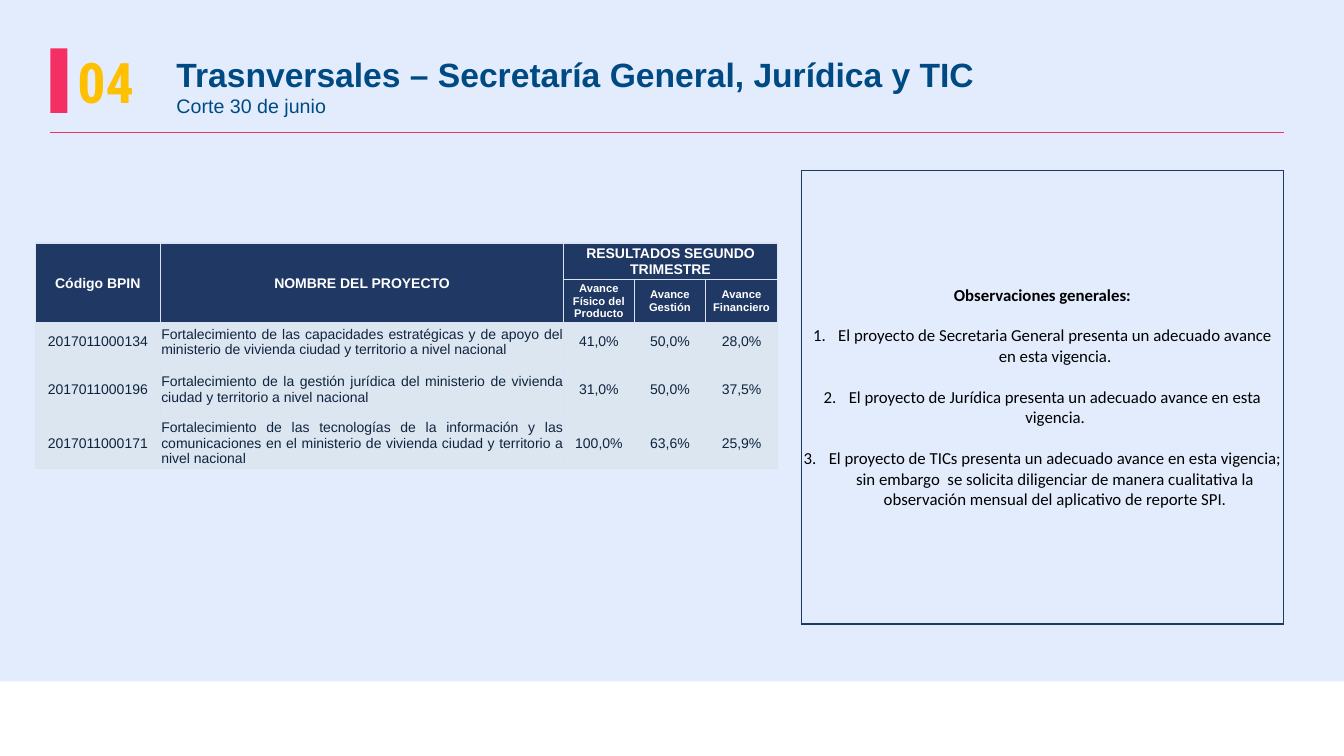
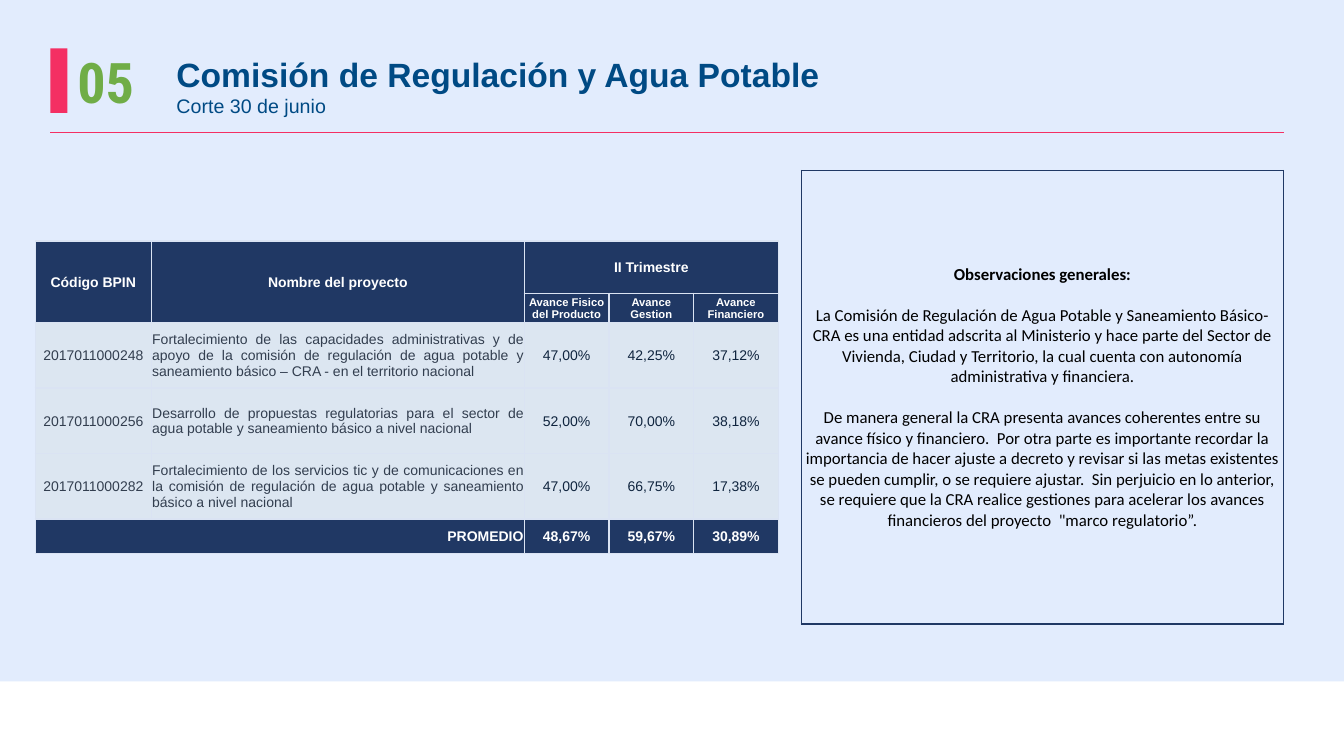
from dataclasses import dataclass

from lxml import etree
from pptx import Presentation
from pptx import util as u
from pptx.dml.color import RGBColor
from pptx.enum import shapes, text
from pptx.oxml import ns

EMU_PER_PX = 9144  # 100 px to the inch
ALIGN = text.PP_ALIGN


# Theme and content types
@dataclass(frozen=True)
class Theme:
    background: str = "E2ECFD"
    white: str = "FFFFFF"
    black: str = "000000"
    title: str = "004A84"
    accent: str = "F42F63"
    navy: str = "203864"
    body_fill: str = "DCE6F1"
    grid: str = "DAE3F3"
    ink: str = "0F243E"
    slate: str = "323E4F"
    amber: str = "FFC000"
    green: str = "70AD47"
    font: str = "Arial"
    remark_font: str = "Calibri"
    number_font: str = "Roboto Condensed"
    number_size: int = 40
    title_size: int = 24
    subtitle_size: int = 14
    remark_size: int = 12
    remark_gap: float = 14.6
    table_size: int = 10
    subhead_size: int = 8


THEME = Theme()


@dataclass(frozen=True)
class Box:
    left: int
    top: int
    width: int
    height: int

    def emu(self) -> tuple[u.Emu, ...]:
        return tuple(px(side) for side in (self.left, self.top, self.width, self.height))


@dataclass(frozen=True)
class Style:
    size: int
    color: str
    bold: bool = False
    font: str = THEME.font


@dataclass(frozen=True)
class Project:
    code: str
    name: str
    values: tuple[str, str, str]


@dataclass(frozen=True)
class Results:
    top: int
    columns: tuple[int, ...]
    rows: tuple[int, ...]
    name_head: str
    period_head: str
    value_heads: tuple[str, str, str]
    label_color: str
    projects: tuple[Project, ...]
    averages: tuple[str, ...] = ()


@dataclass(frozen=True)
class Section:
    number: str
    number_color: str
    title: str
    results: Results
    remarks: tuple[str, ...]
    numbered: bool


SECTIONS = (
    Section(
        "04", THEME.amber, "Trasnversales – Secretaría General, Jurídica y TIC",
        Results(
            241, (124, 400, 70, 71, 71), (36, 43, 38, 56, 51),
            "NOMBRE DEL PROYECTO", "RESULTADOS SEGUNDO TRIMESTRE",
            ("Avance Físico del Producto", "Avance Gestión", "Avance Financiero"),
            THEME.ink,
            (
                Project("2017011000134",
                        "Fortalecimiento de las capacidades estratégicas y de apoyo del "
                        "ministerio de vivienda ciudad y territorio a nivel nacional",
                        ("41,0%", "50,0%", "28,0%")),
                Project("2017011000196",
                        "Fortalecimiento de la gestión jurídica del ministerio de vivienda "
                        "ciudad y territorio a nivel nacional",
                        ("31,0%", "50,0%", "37,5%")),
                Project("2017011000171",
                        "Fortalecimiento de las tecnologías de la información y las "
                        "comunicaciones en el ministerio de vivienda ciudad y territorio "
                        "a nivel nacional",
                        ("100,0%", "63,6%", "25,9%")),
            ),
        ),
        (
            "El proyecto de Secretaria General presenta un adecuado avance en esta vigencia.",
            "El proyecto de Jurídica presenta un adecuado avance en esta vigencia.",
            "El proyecto de TICs presenta un adecuado avance en esta vigencia; sin embargo  "
            "se solicita diligenciar de manera cualitativa la observación mensual del "
            "aplicativo de reporte SPI.",
        ),
        True,
    ),
    Section(
        "05", THEME.green, "Comisión de Regulación y Agua Potable",
        Results(
            239, (115, 370, 84, 84, 84), (52, 29, 65, 65, 65, 34),
            "Nombre del proyecto", "II Trimestre",
            ("Avance Fisico del Producto", "Avance Gestion", "Avance Financiero"),
            THEME.slate,
            (
                Project("2017011000248",
                        "Fortalecimiento de las capacidades administrativas y de apoyo de la "
                        "comisión de regulación de agua potable y saneamiento básico – CRA - "
                        "en el territorio nacional",
                        ("47,00%", "42,25%", "37,12%")),
                Project("2017011000256",
                        "Desarrollo de propuestas regulatorias para el sector de agua potable "
                        "y saneamiento básico a nivel nacional",
                        ("52,00%", "70,00%", "38,18%")),
                Project("2017011000282",
                        "Fortalecimiento de los servicios tic y de comunicaciones en la "
                        "comisión de regulación de agua potable y saneamiento básico a nivel "
                        "nacional",
                        ("47,00%", "66,75%", "17,38%")),
            ),
            ("48,67%", "59,67%", "30,89%"),
        ),
        (
            "La Comisión de Regulación de Agua Potable y Saneamiento Básico- CRA es una "
            "entidad adscrita al Ministerio y hace parte del Sector de Vivienda, Ciudad y "
            "Territorio, la cual cuenta con autonomía administrativa y financiera.",
            "De manera general la CRA presenta avances coherentes entre su avance físico y "
            "financiero.  Por otra parte es importante recordar la importancia de hacer "
            "ajuste a decreto y revisar si las metas existentes se pueden cumplir, o se "
            "requiere ajustar.  Sin perjuicio en lo anterior, se requiere que la CRA realice "
            "gestiones para acelerar los avances financieros del proyecto  "
            "\"marco regulatorio”.",
        ),
        False,
    ),
)


# Drawing helpers
def px(length: int) -> u.Emu:
    return u.Emu(length * EMU_PER_PX)


def rgb(color: str) -> RGBColor:
    return RGBColor.from_string(color)


def write(paragraph, content: str, style: Style, align=ALIGN.LEFT) -> None:
    paragraph.text = content
    paragraph.alignment = align
    for run in paragraph.runs:
        run.font.name = style.font
        run.font.size = u.Pt(style.size)
        run.font.bold = style.bold
        run.font.color.rgb = rgb(style.color)


def add_block(slide, box: Box, color: str):
    block = slide.shapes.add_shape(shapes.MSO_SHAPE.RECTANGLE, *box.emu())
    block.shadow.inherit = False
    block.fill.solid()
    block.fill.fore_color.rgb = rgb(color)
    block.line.fill.background()
    return block


def add_grid(slide, box: Box, columns: tuple[int, ...], rows: tuple[int, ...]):
    table = slide.shapes.add_table(len(rows), len(columns), *box.emu()).table
    table.first_row = table.horz_banding = False
    for column, width in zip(table.columns, columns):
        column.width = px(width)
    for row, height in zip(table.rows, rows):
        row.height = px(height)
    return table


def format_cell(cell, border: str, fill: str | None = None) -> None:
    cell.vertical_anchor = text.MSO_ANCHOR.MIDDLE
    cell.margin_left = cell.margin_right = cell.margin_top = px(1)
    cell.margin_bottom = 0
    properties = cell._tc.get_or_add_tcPr()
    for side in ("a:lnL", "a:lnR", "a:lnT", "a:lnB"):
        line = etree.SubElement(properties, ns.qn(side), w=str(u.Pt(1)))
        solid = etree.SubElement(line, ns.qn("a:solidFill"))
        etree.SubElement(solid, ns.qn("a:srgbClr"), val=border)
    if fill:
        cell.fill.solid()
        cell.fill.fore_color.rgb = rgb(fill)
    else:
        cell.fill.background()


# Slide parts
def add_header(slide, section: Section) -> None:
    title = slide.shapes.title
    title.left, title.top, title.width, title.height = Box(165, 48, 1096, 74).emu()
    frame = title.text_frame
    frame.word_wrap = True
    frame.auto_size = text.MSO_AUTO_SIZE.NONE
    frame.vertical_anchor = text.MSO_ANCHOR.TOP
    write(frame.paragraphs[0], section.title, Style(THEME.title_size, THEME.title, True))
    write(frame.add_paragraph(), "Corte 30 de junio", Style(THEME.subtitle_size, THEME.title))

    add_block(slide, Box(50, 48, 17, 64), THEME.accent)
    rule = slide.shapes.add_connector(
        shapes.MSO_CONNECTOR.STRAIGHT, px(50), px(131), px(1274), px(131))
    rule.line.color.rgb = rgb(THEME.accent)
    rule.line.width = u.Pt(0.5)
    etree.SubElement(rule.element.spPr, ns.qn("a:effectLst"))

    number = slide.shapes.add_textbox(*Box(67, 42, 80, 77).emu()).text_frame
    number.word_wrap = False
    write(number.paragraphs[0], section.number,
          Style(THEME.number_size, section.number_color, True, THEME.number_font))


def add_results(slide, results: Results) -> None:
    box = Box(35, results.top, sum(results.columns), sum(results.rows))
    table = add_grid(slide, box, results.columns, results.rows)
    last_body_row = 1 + len(results.projects)
    for row_index, row in enumerate(table.rows):
        in_body = 2 <= row_index <= last_body_row
        for cell in row.cells:
            format_cell(cell, THEME.grid, THEME.body_fill if in_body else THEME.navy)

    def put(row: int, column: int, content: str, style: Style, align=ALIGN.CENTER) -> None:
        write(table.cell(row, column).text_frame.paragraphs[0], content, style, align)

    # Two-level heading
    head = Style(THEME.table_size, THEME.white, True)
    for column in (0, 1):
        table.cell(0, column).merge(table.cell(1, column))
    table.cell(0, 2).merge(table.cell(0, 4))
    for column, label in enumerate(("Código BPIN", results.name_head, results.period_head)):
        put(0, column, label, head)
    for column, label in enumerate(results.value_heads, start=2):
        put(1, column, label, Style(THEME.subhead_size, THEME.white, True))

    # Projects
    label_style = Style(THEME.table_size, results.label_color)
    for row, project in enumerate(results.projects, start=2):
        put(row, 0, project.code, label_style)
        put(row, 1, project.name, label_style, ALIGN.JUSTIFY)
        for column, value in enumerate(project.values, start=2):
            put(row, column, value, Style(THEME.table_size, THEME.ink))

    # Averages
    if results.averages:
        row = last_body_row + 1
        table.cell(row, 0).merge(table.cell(row, 1))
        put(row, 0, "PROMEDIO", head, ALIGN.RIGHT)
        for column, value in enumerate(results.averages, start=2):
            put(row, column, value, head)


def add_remarks(slide, section: Section) -> None:
    box = Box(795, 169, 478, 450)
    cell = add_grid(slide, box, (box.width,), (box.height,)).cell(0, 0)
    format_cell(cell, THEME.navy)
    frame = cell.text_frame
    write(frame.paragraphs[0], "Observaciones generales:",
          Style(THEME.remark_size, THEME.black, True, THEME.remark_font), ALIGN.CENTER)
    for remark in section.remarks:
        paragraph = frame.add_paragraph()
        paragraph.space_before = u.Pt(THEME.remark_gap)
        if section.numbered:
            properties = paragraph._p.get_or_add_pPr()
            properties.set("marL", str(px(25)))
            properties.set("indent", str(-px(25)))
            etree.SubElement(properties, ns.qn("a:buAutoNum"), type="arabicPeriod")
        write(paragraph, remark,
              Style(THEME.remark_size, THEME.black, font=THEME.remark_font), ALIGN.CENTER)


def main() -> None:
    presentation = Presentation()
    presentation.slide_width, presentation.slide_height = px(1333), px(750)
    master = presentation.slide_master
    master.background.fill.solid()
    master.background.fill.fore_color.rgb = rgb(THEME.background)

    for index, section in enumerate(SECTIONS):
        slide = presentation.slides.add_slide(presentation.slide_layouts[5])
        if index == 0:  # the footer band belongs to the master
            band = add_block(slide, Box(0, 676, 1333, 74), THEME.white)
            master.shapes.element.insert(2, band.element)
        add_header(slide, section)
        add_remarks(slide, section)
        add_results(slide, section.results)
    presentation.save("out.pptx")


if __name__ == "__main__":
    main()
